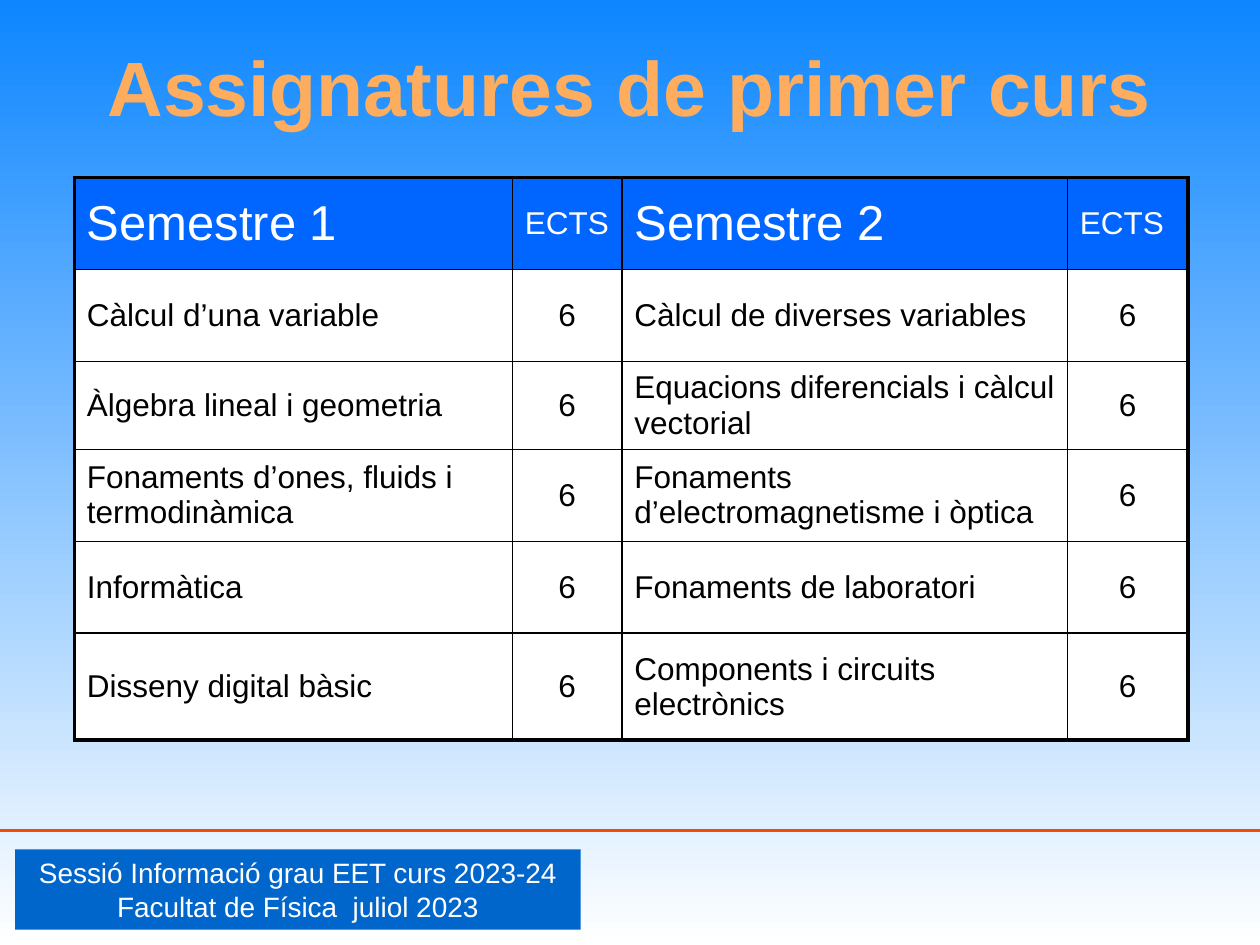
from dataclasses import dataclass

from lxml import etree
from pptx import Presentation
from pptx.dml.color import RGBColor
from pptx.enum.shapes import MSO_CONNECTOR, MSO_SHAPE
from pptx.enum.text import MSO_ANCHOR, MSO_AUTO_SIZE, PP_ALIGN
from pptx.oxml.ns import qn
from pptx.util import Pt

LEFT, CENTER = PP_ALIGN.LEFT, PP_ALIGN.CENTER
MIDDLE = MSO_ANCHOR.MIDDLE
RECT, STRAIGHT = MSO_SHAPE.RECTANGLE, MSO_CONNECTOR.STRAIGHT
NO_AUTOFIT = MSO_AUTO_SIZE.NONE
TITLE_ONLY = 5


@dataclass(frozen=True)
class Theme:
    font: str = "Arial"
    sky: str = "0D86FF"
    white: str = "FFFFFF"
    black: str = "000000"
    title: str = "FDAD5D"
    rule: str = "F04C02"
    footer: str = "0066CC"
    header: str = "0066FF"
    title_size: int = 44
    semester_size: int = 28
    body_size: int = 18
    footer_size: int = 16
    outer_border: float = 2.25
    inner_border: float = 1


THEME = Theme()

HEADER = ("Semestre 1", "ECTS", "Semestre 2", "ECTS")
COURSES = (
    ("Càlcul d’una variable", "Càlcul de diverses variables"),
    ("Àlgebra lineal i geometria", "Equacions diferencials i càlcul vectorial"),
    ("Fonaments d’ones, fluids i termodinàmica",
     "Fonaments d’electromagnetisme i òptica"),
    ("Informàtica", "Fonaments de laboratori"),
    ("Disseny digital bàsic", "Components i circuits electrònics"),
)
CREDITS = "6"
COL_SHARES = (3.48, 0.87, 3.54, 0.96)
ROW_SHARES = (0.73, 0.73, 0.7, 0.73, 0.73, 0.85)
FOOTER = ("Sessió Informació grau EET curs 2023-24",
          "Facultat de Física  juliol 2023")


def rgb(color):
    return RGBColor.from_string(color)


def write(p, text, size, color, align=LEFT, bold=False):
    p.text = text
    p.alignment = align
    for r in p.runs:
        r.font.name = THEME.font
        r.font.size = Pt(size)
        r.font.bold = bold
        r.font.color.rgb = rgb(color)


def paint_background(s):
    fill = s.background.fill
    fill.gradient()
    fill.gradient_angle = 270
    for stop, color in zip(fill.gradient_stops, (THEME.sky, THEME.white)):
        stop.color.rgb = rgb(color)


def place_title(s, x, y, w, h):
    sp = s.shapes.title
    sp.left, sp.top, sp.width, sp.height = Pt(x), Pt(y), Pt(w), Pt(h)
    tf = sp.text_frame
    tf.auto_size = NO_AUTOFIT
    tf.vertical_anchor = MIDDLE
    write(tf.paragraphs[0], "Assignatures de primer curs",
          THEME.title_size, THEME.title, CENTER, bold=True)


def add_footer(s, x, y, w, h):
    """Rule across the box, with the session label below it."""
    line = s.shapes.add_connector(STRAIGHT, Pt(x), Pt(y), Pt(x + w), Pt(y))
    line.line.color.rgb = rgb(THEME.rule)
    line.line.width = Pt(1.5)
    etree.SubElement(line._element.spPr, qn("a:effectLst"))

    sp = s.shapes.add_shape(RECT, Pt(x + 8.6), Pt(y + 10.8), Pt(323.3), Pt(h))
    sp.shadow.inherit = False
    sp.fill.solid()
    sp.fill.fore_color.rgb = rgb(THEME.footer)
    sp.line.fill.background()
    tf = sp.text_frame
    tf.word_wrap = False
    tf.vertical_anchor = MIDDLE
    for i, text in enumerate(FOOTER):
        p = tf.add_paragraph() if i else tf.paragraphs[0]
        write(p, text, THEME.footer_size, THEME.white, CENTER)


def set_borders(cell, **widths):
    """Widths in points, keyed by side: L, R, T, B."""
    tc_pr = cell._tc.get_or_add_tcPr()
    for side, width in widths.items():
        ln = etree.SubElement(tc_pr, qn(f"a:ln{side}"), w=str(Pt(width)))
        fill = etree.SubElement(ln, qn("a:solidFill"))
        etree.SubElement(fill, qn("a:srgbClr"), val=THEME.black)


def share(total, shares):
    return [Pt(total * part / sum(shares)) for part in shares]


def add_course_table(s, x, y, w, h):
    rows = [HEADER] + [(a, CREDITS, b, CREDITS) for a, b in COURSES]
    last_row, last_col = len(rows) - 1, len(HEADER) - 1
    table = s.shapes.add_table(len(rows), len(HEADER),
                               Pt(x), Pt(y), Pt(w), Pt(h)).table
    table.horz_banding = False
    for col, width in zip(table.columns, share(w, COL_SHARES)):
        col.width = width
    for row, height in zip(table.rows, share(h, ROW_SHARES)):
        row.height = height

    def border(is_edge):
        return THEME.outer_border if is_edge else THEME.inner_border

    for i, texts in enumerate(rows):
        for j, text in enumerate(texts):
            cell = table.cell(i, j)
            is_header, is_credits = i == 0, j % 2 == 1
            set_borders(cell, L=border(j == 0), R=border(j == last_col),
                        T=border(i == 0), B=border(i == last_row))
            cell.fill.solid()
            cell.fill.fore_color.rgb = rgb(
                THEME.header if is_header else THEME.white)
            cell.vertical_anchor = MIDDLE
            write(cell.text_frame.paragraphs[0], text,
                  THEME.semester_size if is_header and not is_credits
                  else THEME.body_size,
                  THEME.white if is_header else THEME.black,
                  CENTER if is_credits and not is_header else LEFT)


def main():
    prs = Presentation()
    prs.slide_width, prs.slide_height = Pt(720), Pt(540)
    s = prs.slides.add_slide(prs.slide_layouts[TITLE_ONLY])
    paint_background(s)
    add_footer(s, 0, 474.5, 720, 46)
    place_title(s, 36, 24, 648, 50)
    add_course_table(s, 42.5, 101.5, 636.5, 321.5)
    prs.save("out.pptx")


if __name__ == "__main__":
    main()
